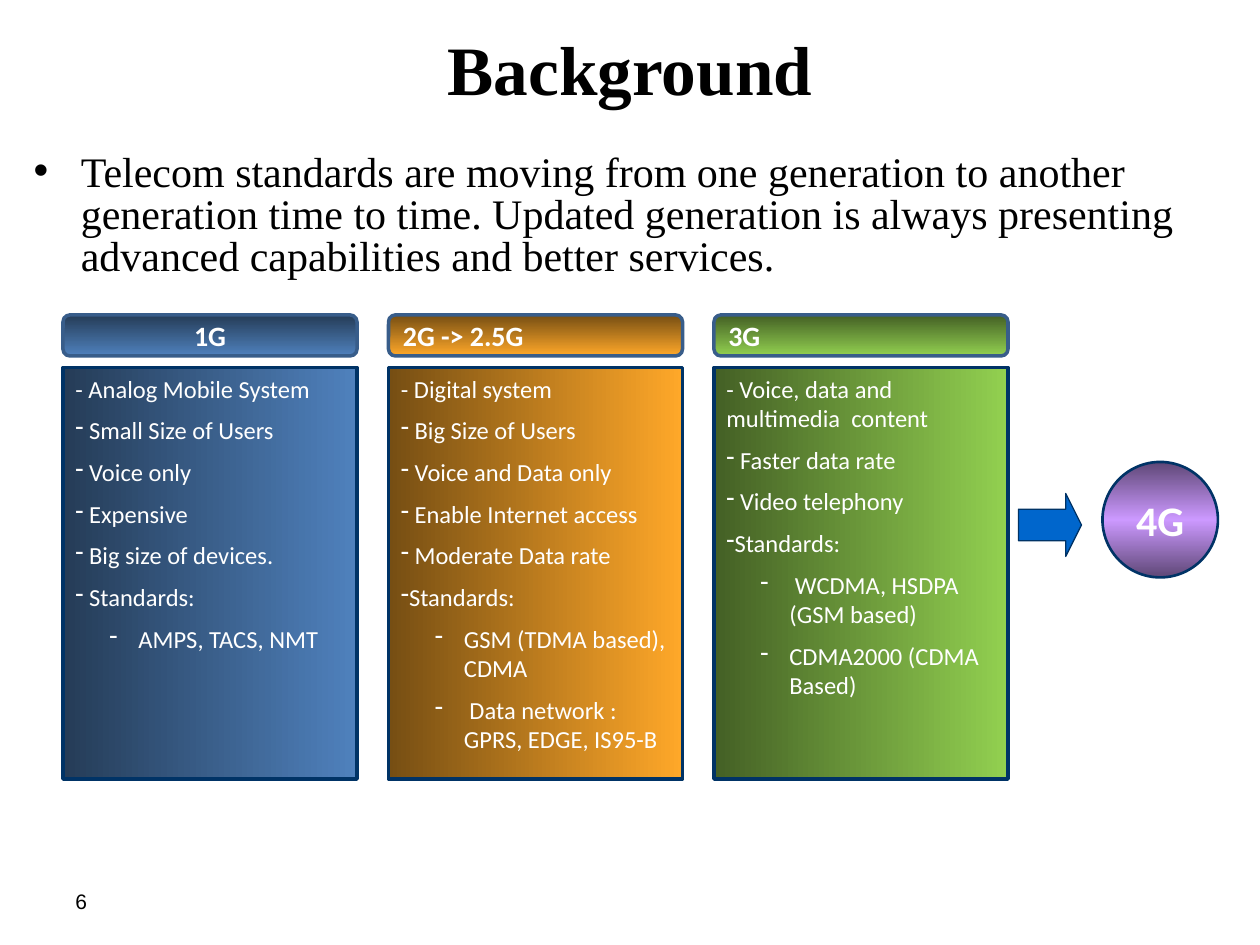
from copy import deepcopy

from lxml import etree
from pptx import Presentation
from pptx.dml.color import RGBColor
from pptx.enum.shapes import MSO_SHAPE
from pptx.enum.text import MSO_ANCHOR, MSO_AUTO_SIZE, PP_ALIGN
from pptx.oxml.ns import qn
from pptx.util import Inches, Pt

RECT, ROUNDED = MSO_SHAPE.RECTANGLE, MSO_SHAPE.ROUNDED_RECTANGLE
ARROW, OVAL = MSO_SHAPE.RIGHT_ARROW, MSO_SHAPE.OVAL
TOP, MIDDLE = MSO_ANCHOR.TOP, MSO_ANCHOR.MIDDLE
LEFT, CENTER = PP_ALIGN.LEFT, PP_ALIGN.CENTER
NO_FIT = MSO_AUTO_SIZE.NONE

THEME = {
    "serif": "Times New Roman", "sans": "Calibri", "plain": "Arial",
    "title": 39.6, "lead": 24, "heading": 16, "item": 14, "number": 12,
    "ink": "000000", "light": "FFFFFF", "edge": "003366", "heading_edge": "385D8A",
    "arrow": "0066CC",
    "1G": ["253C57", "4F81BD"],
    "2G": ["764E13", "FFA829"],
    "3G": ["446025", "92D050"],
    "4G": ["5E4776", "CC99FF", "5E4776"],
}

GENERATIONS = [
    ("1G", "1G", CENTER,
     ["- Analog Mobile System", " Small Size of Users", " Voice only", " Expensive",
      " Big size of devices.", " Standards:"],
     ["AMPS, TACS, NMT"]),
    ("2G", "2G -> 2.5G", LEFT,
     ["- Digital system", " Big Size of Users", " Voice and Data only",
      " Enable Internet access", " Moderate Data rate", "Standards:"],
     ["GSM (TDMA based), CDMA", " Data network : GPRS, EDGE, IS95-B"]),
    ("3G", "3G", LEFT,
     ["- Voice, data and multimedia  content", " Faster data rate",
      " Video telephony", "Standards:"],
     [" WCDMA, HSDPA (GSM based)", "CDMA2000 (CDMA Based)"]),
]

prs = Presentation()
prs.slide_width, prs.slide_height = Inches(10), Inches(7.5)
slide = prs.slides.add_slide(prs.slide_layouts[1])
CELL = prs.slide_width / 120


def style_text(part, text, font, size, color, bold=False, align=LEFT, anchor=MIDDLE):
    frame = part.text_frame
    frame.text = text
    frame.word_wrap = True
    frame.auto_size = NO_FIT
    frame.vertical_anchor = anchor
    for paragraph in frame.paragraphs:
        paragraph.alignment = align
        for run in paragraph.runs:
            run.font.name = THEME[font]
            run.font.size = Pt(THEME[size])
            run.font.bold = bold
            run.font.color.rgb = RGBColor.from_string(THEME[color])
    return frame


def add_block(kind, box, colors, angle, edge, width):
    block = slide.shapes.add_shape(kind, *[round(CELL * side) for side in box])
    block.shadow.inherit = False
    block.line.color.rgb = RGBColor.from_string(THEME[edge])
    block.line.width = Pt(width)
    if len(colors) == 1:
        block.fill.solid()
        block.fill.fore_color.rgb = RGBColor.from_string(colors[0])
        return block
    block.fill.gradient()
    block.fill.gradient_angle = -angle % 360
    stop_list = block._element.spPr.find(qn("a:gradFill")).find(qn("a:gsLst"))
    for _ in colors[2:]:
        stop_list.append(deepcopy(stop_list[-1]))
    for index, (stop, color) in enumerate(zip(block.fill.gradient_stops, colors)):
        stop.position = index / (len(colors) - 1)
        stop.color.rgb = RGBColor.from_string(color)
    return block


title = slide.shapes.title
lead = slide.placeholders[1]
page_number = slide.shapes.add_textbox(0, 0, 0, 0)
for part, box in [(title, (6, 2, 108, 9)), (lead, (2, 14, 116, 10)),
                  (page_number, (6, 83.4, 28, 4.8))]:
    part.left, part.top, part.width, part.height = [round(CELL * side) for side in box]

style_text(title, "Background", "serif", "title", "ink", bold=True, align=CENTER)
lead_frame = style_text(
    lead,
    "Telecom standards are moving from one generation to another generation "
    "time to time. Updated generation is always presenting advanced "
    "capabilities and better services.",
    "serif", "lead", "ink", anchor=TOP)
lead_frame.paragraphs[0].line_spacing = 0.84
style_text(page_number, "6", "plain", "number", "ink")

for column, (key, heading, heading_align, items, standards) in enumerate(GENERATIONS):
    left = 6 + 31 * column
    card = add_block(RECT, (left, 35, 28, 39.2), THEME[key], 0, "edge", 2)
    frame = style_text(card, "\n".join(items + standards), "sans", "item", "light", anchor=TOP)
    for row, paragraph in enumerate(frame.paragraphs):
        paragraph.space_before = Pt(THEME["item"] / 2)
        if row == 0:
            continue
        props = paragraph._p.get_or_add_pPr()
        if row >= len(items):
            paragraph.level = 1
            props.set("marL", str(Inches(0.5)))
            props.set("indent", str(Inches(-0.23)))
        etree.SubElement(props, qn("a:buFontTx"))
        etree.SubElement(props, qn("a:buChar")).set("char", "-")

    header = add_block(ROUNDED, (left, 30, 28, 3.9), THEME[key], 90, "heading_edge", 2)
    style_text(header, heading, "sans", "heading", "light", bold=True, align=heading_align)

arrow = add_block(ARROW, (97, 47, 6, 6), [THEME["arrow"]], 0, "edge", 0.75)
arrow.adjustments[1] = 0.25

next_generation = add_block(OVAL, (105, 44, 11, 11), THEME["4G"], 90, "edge", 1.5)
next_frame = style_text(next_generation, "4G", "sans", "lead", "light", bold=True, align=CENTER)
next_frame.word_wrap = False

prs.save("out.pptx")
